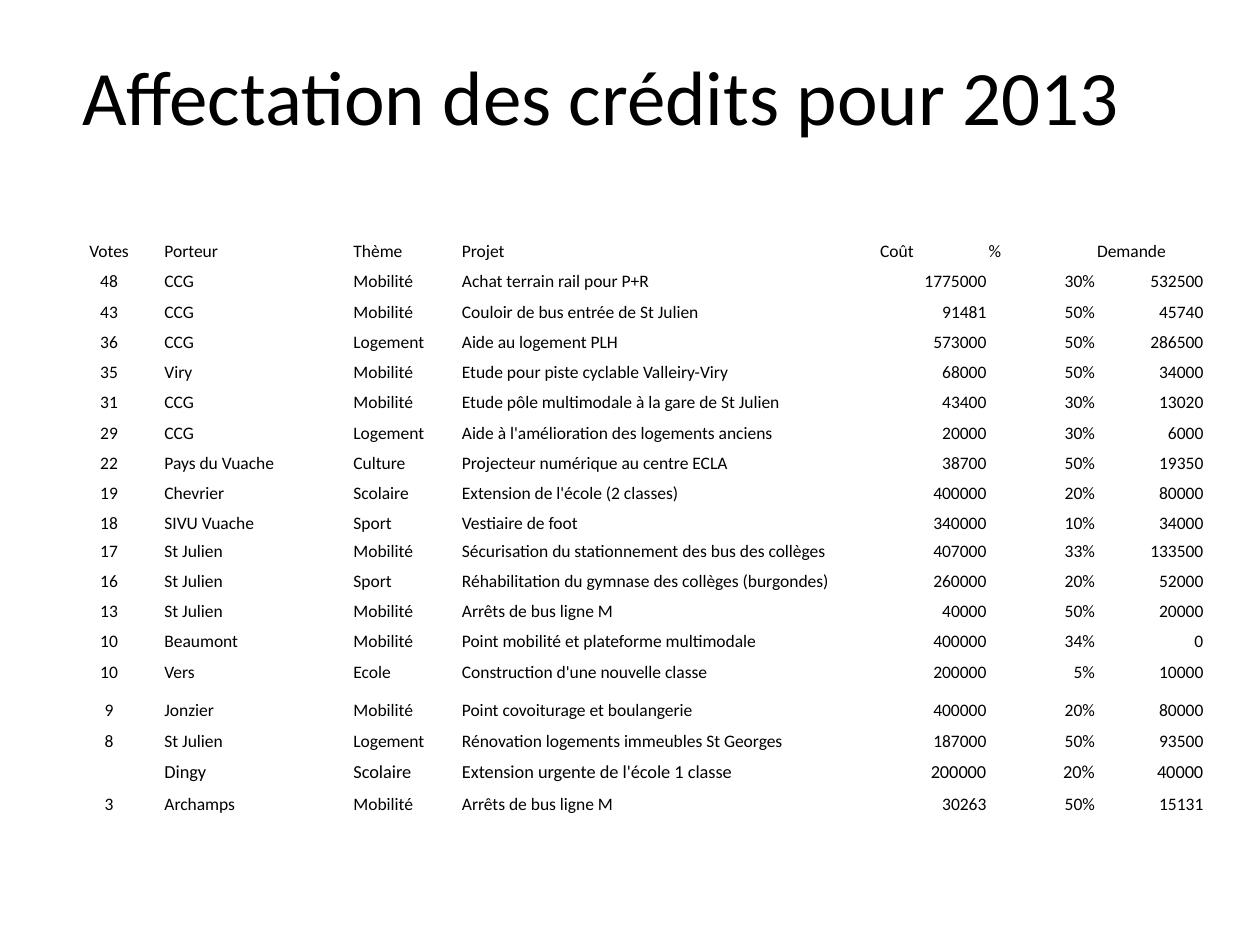
"""Build the slide listing the 2013 project credits."""
import lxml.etree
import pptx
import pptx.dml.color
import pptx.enum.text
import pptx.oxml.ns
import pptx.util

Pt = pptx.util.Pt
BLACK = pptx.dml.color.RGBColor(0x00, 0x00, 0x00)
ALIGN = pptx.enum.text.PP_ALIGN
ANCHOR = pptx.enum.text.MSO_ANCHOR

TITLE = "Affectation des crédits pour 2013"
HEADINGS = ("Votes", "Porteur", "Thème", "Projet", "Coût", "%", "Demande")
PROJECTS = [
    ("48", "CCG", "Mobilité", "Achat terrain rail pour P+R", "1775000", "30%", "532500"),
    ("43", "CCG", "Mobilité", "Couloir de bus entrée de St Julien", "91481", "50%", "45740"),
    ("36", "CCG", "Logement", "Aide au logement PLH", "573000", "50%", "286500"),
    ("35", "Viry", "Mobilité", "Etude pour piste cyclable Valleiry-Viry", "68000", "50%", "34000"),
    ("31", "CCG", "Mobilité", "Etude pôle multimodale à la gare de St Julien", "43400", "30%", "13020"),
    ("29", "CCG", "Logement", "Aide à l'amélioration des logements anciens", "20000", "30%", "6000"),
    ("22", "Pays du Vuache", "Culture", "Projecteur numérique au centre ECLA", "38700", "50%", "19350"),
    ("19", "Chevrier", "Scolaire", "Extension de l'école (2 classes)", "400000", "20%", "80000"),
    ("18", "SIVU Vuache", "Sport", "Vestiaire de foot", "340000", "10%", "34000"),
    ("17", "St Julien", "Mobilité", "Sécurisation du stationnement des bus des collèges", "407000", "33%", "133500"),
    ("16", "St Julien", "Sport", "Réhabilitation du gymnase des collèges (burgondes)", "260000", "20%", "52000"),
    ("13", "St Julien", "Mobilité", "Arrêts de bus ligne M", "40000", "50%", "20000"),
    ("10", "Beaumont", "Mobilité", "Point mobilité et plateforme multimodale", "400000", "34%", "0"),
    ("10", "Vers", "Ecole", "Construction d'une nouvelle classe", "200000", "5%", "10000"),
    ("9", "Jonzier", "Mobilité", "Point covoiturage et boulangerie", "400000", "20%", "80000"),
    ("8", "St Julien", "Logement", "Rénovation logements immeubles St Georges", "187000", "50%", "93500"),
    ("", "Dingy", "Scolaire", "Extension urgente de l'école 1 classe", "200000", "20%", "40000"),
    ("3", "Archamps", "Mobilité", "Arrêts de bus ligne M", "30263", "50%", "15131"),
]
COLUMN_WIDTHS = (62, 108, 62, 239, 62, 62, 62)
ROW_HEIGHTS = [17.3] * 10 + [15.5] + [17.3] * 4 + [21.9] + [17.9] * 3
HEADING_ALIGNS = [ALIGN.CENTER] + [ALIGN.LEFT] * 6
PROJECT_ALIGNS = [ALIGN.CENTER] + [ALIGN.LEFT] * 3 + [ALIGN.RIGHT] * 3
URGENT_ROW = 17


def write_text(frame, text, *, size, font="Calibri", color=BLACK, align=ALIGN.LEFT):
    """Fill a text frame with one formatted paragraph."""
    paragraph = frame.paragraphs[0]
    paragraph.alignment = align
    if not text:
        end_mark = lxml.etree.SubElement(paragraph._p, pptx.oxml.ns.qn("a:endParaRPr"))
        end_mark.set("sz", str(int(size * 100)))
        return
    run = paragraph.add_run()
    run.text = text
    run.font.size = Pt(size)
    run.font.name = font
    run.font.color.rgb = color


class CreditSlide:
    """Hold the text style and the slide being built."""

    title_size = 44
    body_size = 10
    urgent_size = 10.5
    cell_margin = 0.7

    def __init__(self, slide):
        self.slide = slide

    def title(self, text, left, top, width, height):
        """Add the centred slide heading."""
        frame = self.slide.shapes.add_textbox(Pt(left), Pt(top), Pt(width), Pt(height)).text_frame
        frame.word_wrap = True
        frame.vertical_anchor = ANCHOR.MIDDLE
        write_text(frame, text, size=self.title_size, align=ALIGN.CENTER)

    def table(self, rows, left, top):
        """Add the unfilled table of projects."""
        grid = self.slide.shapes.add_table(
            len(rows), len(COLUMN_WIDTHS), Pt(left), Pt(top),
            Pt(sum(COLUMN_WIDTHS)), Pt(sum(ROW_HEIGHTS))).table
        grid.first_row = grid.horz_banding = False
        for column, width in zip(grid.columns, COLUMN_WIDTHS):
            column.width = Pt(width)
        for index, values in enumerate(rows):
            grid.rows[index].height = Pt(ROW_HEIGHTS[index])
            size = self.urgent_size if index == URGENT_ROW else self.body_size
            aligns = PROJECT_ALIGNS if index else HEADING_ALIGNS
            for cell, value, align in zip(grid.rows[index].cells, values, aligns):
                self.cell(cell, value, size, align)

    def cell(self, cell, value, size, align):
        """Format and fill one table cell."""
        cell.fill.background()
        cell.vertical_anchor = ANCHOR.BOTTOM
        cell.margin_left = cell.margin_right = cell.margin_top = Pt(self.cell_margin)
        cell.margin_bottom = 0
        write_text(cell.text_frame, value, size=size, align=align)


def main():
    """Create the presentation and save it."""
    presentation = pptx.Presentation()
    presentation.slide_width = Pt(720)
    presentation.slide_height = Pt(540)
    credits = CreditSlide(presentation.slides.add_slide(presentation.slide_layouts[6]))
    credits.title(TITLE, 19.5, 20.5, 648, 67)
    credits.table([HEADINGS] + PROJECTS, 31.3, 132.6)
    presentation.save("out.pptx")


if __name__ == "__main__":
    main()
